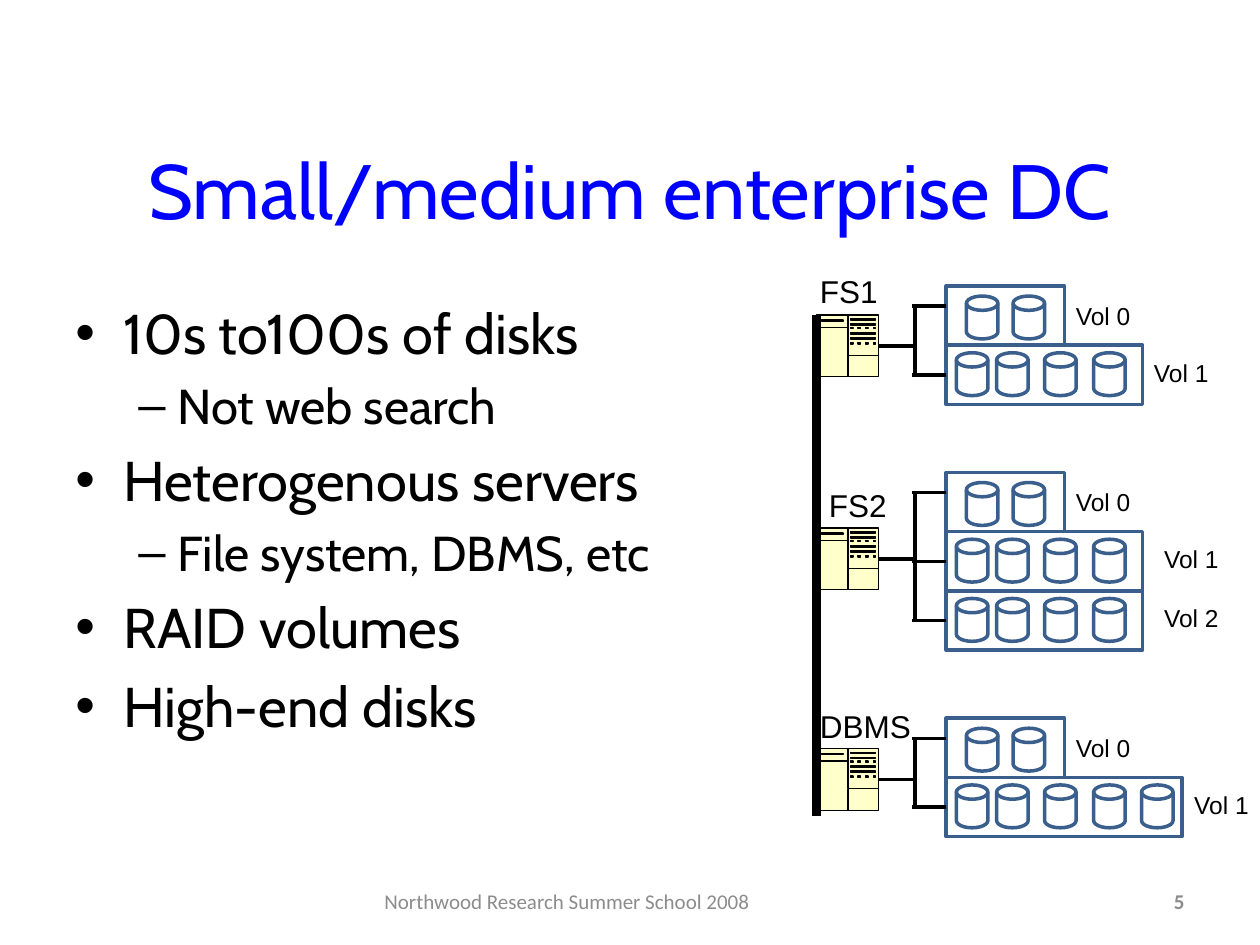
from lxml import etree
from pptx import Presentation
from pptx.dml.color import RGBColor
from pptx.enum.shapes import MSO_CONNECTOR, MSO_SHAPE
from pptx.enum.text import MSO_ANCHOR, PP_ALIGN
from pptx.oxml.ns import qn
from pptx.util import Inches, Pt

RECT, DISK = MSO_SHAPE.RECTANGLE, MSO_SHAPE.FLOWCHART_MAGNETIC_DISK
STRAIGHT = MSO_CONNECTOR.STRAIGHT
TOP, MIDDLE = MSO_ANCHOR.TOP, MSO_ANCHOR.MIDDLE
LEFT, CENTER, RIGHT = PP_ALIGN.LEFT, PP_ALIGN.CENTER, PP_ALIGN.RIGHT

COLORS = {"title": "0000FF", "text": "000000", "footer": "8C8C8C",
          "disk": "3A5F8C", "server": "FFFFCC", "line": "000000"}

TITLE = "Small/medium enterprise DC"
BULLETS = [(0, "10s to100s of disks"), (1, "Not web search"),
           (0, "Heterogenous servers"), (1, "File system, DBMS, etc"),
           (0, "RAID volumes"), (0, "High-end disks")]
LEVELS = [("•", 0.38, 0.38, 32), ("–", 0.81, 0.31, 28)]
FOOTER = "Northwood Research Summer School 2008"
PAGE = "5"

# name, name left, name top, server top, volumes top, volumes as (disks, label left)
SERVERS = [
    ("FS1", 6.41, 2.11, 2.5, 2.27, [(2, 8.44), (4, 9.06)]),
    ("FS2", 6.48, 3.81, 4.19, 3.75, [(2, 8.44), (4, 9.14), (4, 9.14)]),
    ("DBMS", 6.41, 5.56, 5.94, 5.7, [(2, 8.44), (5, 9.38)]),
]
SERVER_X, SERVER_SIZE = 6.48, 0.49
TRUNK_X, VOLUME_X, VOLUME_H = 7.26, 7.51, 0.47
VOLUME_W = {2: 0.94, 4: 1.56, 5: 1.87}
PAIR_X = [7.67, 8.04]
ROW_X = [7.59, 7.91, 8.29, 8.68, 9.06]

BARS = [(4, 4, 21, 5)] + [(27, y, 47, y + 1) for y in (3, 7, 14, 18)]
LIGHTS = [(x, y, x + 2, y + 1) for y in (10, 22) for x in (27, 33, 39, 45)]
PANEL_LINES = [[(0, 10), (25, 10), (25, 32), (49, 32)],
               [(25, 32), (25, 49)], [(25, 0), (25, 10)]]


def rgb(name):
    return RGBColor.from_string(COLORS[name])


def add_run(p, text, size, font, color, bold=None):
    r = p.add_run()
    r.text = text
    r.font.size, r.font.name, r.font.bold = Pt(size), font, bold
    r.font.color.rgb = rgb(color)


def add_frame(s, x, y, w, h, anchor=TOP):
    tf = s.shapes.add_textbox(Inches(x), Inches(y), Inches(w), Inches(h)).text_frame
    tf.word_wrap, tf.vertical_anchor = True, anchor
    return tf


def add_text(s, box, text, size, font, color, align=LEFT, anchor=TOP, bold=None):
    tf = add_frame(s, *box, anchor)
    tf.paragraphs[0].alignment = align
    add_run(tf.paragraphs[0], text, size, font, color, bold)
    return tf


def add_label(s, x, y, w, h, text, size):
    add_text(s, (x, y, w, h), text, size, "Arial", "text").margin_right = 0


def style(sp, line, width, fill=None):
    sp.shadow.inherit = False
    if fill:
        sp.fill.solid()
        sp.fill.fore_color.rgb = rgb(fill)
    else:
        sp.fill.background()
    sp.line.color.rgb, sp.line.width = rgb(line), Pt(width)


def add_box(s, kind, x, y, w, h, line="disk", width=2, fill=None):
    sp = s.shapes.add_shape(kind, Inches(x), Inches(y), Inches(w), Inches(h))
    style(sp, line, width, fill)
    return sp


def add_line(s, x1, y1, x2, y2, width=2):
    c = s.shapes.add_connector(STRAIGHT, Inches(x1), Inches(y1), Inches(x2), Inches(y2))
    c.line.color.rgb, c.line.width = rgb("line"), Pt(width)
    etree.SubElement(c._element.spPr, qn("a:effectLst"))
    return c


def add_bullets(s):
    tf = add_frame(s, 0.5, 2.32, 5.12, 4.56)
    for i, (level, text) in enumerate(BULLETS):
        char, margin, hang, size = LEVELS[level]
        p = tf.add_paragraph() if i else tf.paragraphs[0]
        p.level = level
        p.space_before = Pt(0.2 * size if i else 0)
        pPr = p._p.get_or_add_pPr()
        pPr.set("marL", str(Inches(margin)))
        pPr.set("indent", str(-Inches(hang)))
        etree.SubElement(pPr, qn("a:buFont")).set("typeface", "Arial")
        etree.SubElement(pPr, qn("a:buChar")).set("char", char)
        add_run(p, text, size, "Cabin", "text")


def add_server(s, y):
    box = add_box(s, RECT, SERVER_X, y, SERVER_SIZE, SERVER_SIZE, "line", 0.75, "server")
    fb = s.shapes.build_freeform(0, 10, scale=Inches(0.01))
    fb.add_line_segments(PANEL_LINES[0][1:], close=False)
    for start, end in PANEL_LINES[1:]:
        fb.move_to(*start)
        fb.add_line_segments([end], close=False)
    for x1, y1, x2, y2 in BARS + LIGHTS:
        fb.move_to(x1, y1)
        fb.add_line_segments([(x2, y1), (x2, y2), (x1, y2)], close=True)
    style(fb.convert_to_shape(Inches(SERVER_X), Inches(y)), "line", 0.75)
    return box


def add_volumes(s, top, volumes):
    branches = []
    for i, (disks, label_x) in enumerate(volumes):
        y = top + i * VOLUME_H
        disk_y = y + (0.06 if i else 0.08)
        for x in (ROW_X if i else PAIR_X)[:disks]:
            add_box(s, DISK, x, disk_y, 0.25, 0.34)
        box = add_box(s, RECT, VOLUME_X, y, VOLUME_W[disks], VOLUME_H)
        branch_y = y + (VOLUME_H / 2 if i else 0.16)
        c = add_line(s, TRUNK_X - 0.02, branch_y, VOLUME_X, branch_y)
        if i:
            c.end_connect(box, 1)
        branches.append(branch_y)
        add_label(s, label_x, disk_y - 0.01, 0.6, 0.34, f"Vol {i}", 14)
    add_line(s, TRUNK_X, branches[0], TRUNK_X, branches[-1])


def main():
    prs = Presentation()
    prs.slide_width, prs.slide_height = Inches(10), Inches(7.5)
    s = prs.slides.add_slide(prs.slide_layouts[6])
    add_text(s, (0.5, 0.87, 9, 1.25), TITLE, 44, "Cabin", "title", CENTER, MIDDLE)
    add_bullets(s)
    for name, name_x, name_y, server_y, top, volumes in SERVERS:
        server = add_server(s, server_y)
        mid = server_y + SERVER_SIZE / 2
        add_line(s, SERVER_X + SERVER_SIZE, mid, TRUNK_X, mid).begin_connect(server, 3)
        add_volumes(s, top, volumes)
        add_label(s, name_x, name_y, 0.94, 0.4, name, 18)
    add_line(s, SERVER_X, 2.5, SERVER_X, 6.48, 5)
    add_text(s, (7.17, 6.95, 2.33, 0.4), PAGE, 12, "Calibri", "footer", RIGHT, MIDDLE, True)
    add_text(s, (2.42, 6.95, 4.16, 0.4), FOOTER, 12, "Calibri", "footer", CENTER, MIDDLE)
    prs.save("out.pptx")


if __name__ == "__main__":
    main()
